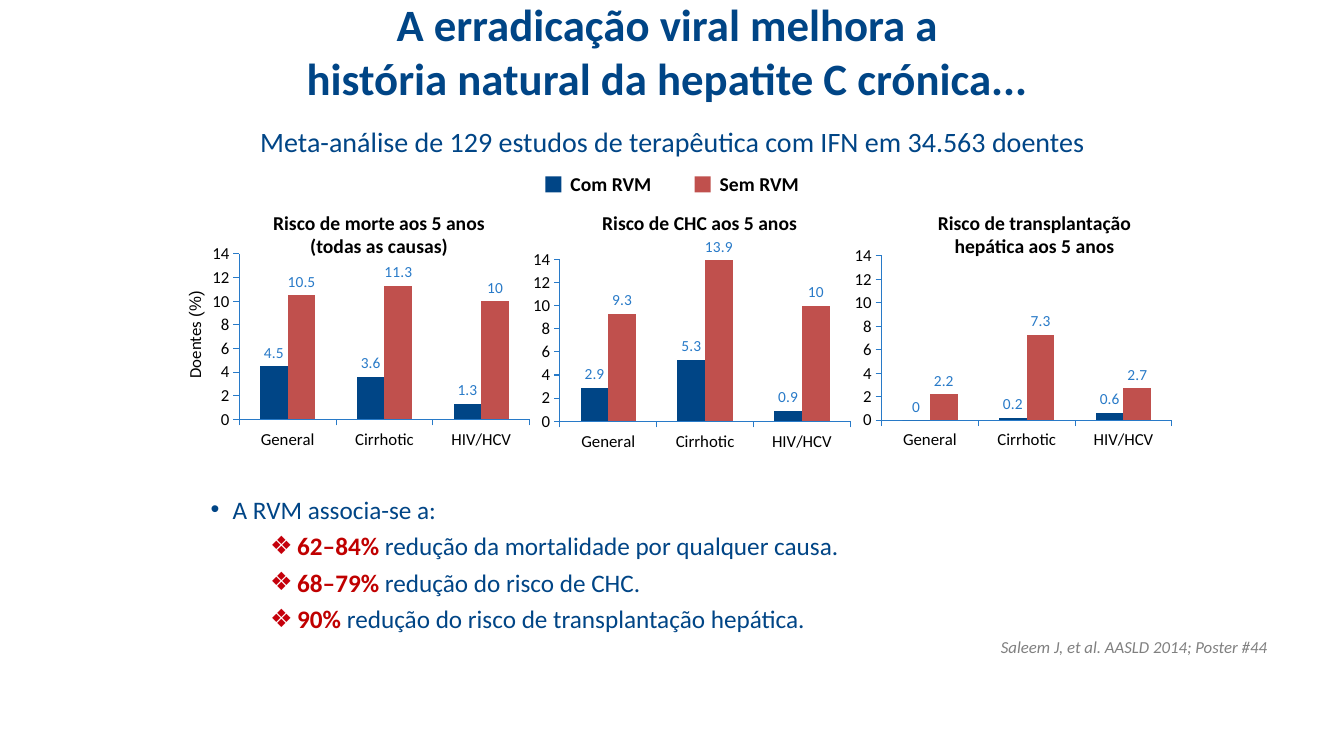
"""Slide on viral eradication and the natural history of chronic hepatitis C."""
from lxml import etree
from pptx import Presentation, util as u
from pptx.chart.data import CategoryChartData
from pptx.dml.color import RGBColor
from pptx.enum import chart as ch, shapes, text
from pptx.oxml.ns import qn

NAVY, RED, BLUE, BLACK = "004586", "C0504D", "287AC8", "000000"
CENTER, RIGHT = text.PP_ALIGN.CENTER, text.PP_ALIGN.RIGHT


def paint(target, color):
    if hasattr(target, "solid"):
        target.solid()
        target = target.fore_color
    target.rgb = RGBColor.from_string(color)


def write(box, paragraphs, size=14, color=BLACK, bold=False, italic=False, align=None,
          anchor=text.MSO_ANCHOR.TOP, rotation=0, bullets=(), space=0):
    """Each paragraph is a list of (text, overrides) runs; bullets hold (mark, margin, hanging, color)."""
    area = slide.shapes.add_textbox(*map(u.Inches, box))
    area.rotation = rotation
    frame = area.text_frame
    frame.word_wrap, frame.vertical_anchor = True, anchor
    for i, runs in enumerate(paragraphs):
        para = frame.paragraphs[0] if i == 0 else frame.add_paragraph()
        if bullets:
            mark, margin, hanging, mark_color = bullets[i]
            props = para._p.get_or_add_pPr()
            props.set("marL", str(u.Inches(margin)))
            props.set("indent", str(-u.Inches(hanging)))
            tint = etree.SubElement(props, qn("a:buClr"))
            etree.SubElement(tint, qn("a:srgbClr"), val=mark_color)
            etree.SubElement(props, qn("a:buFont"), typeface="Arial")
            etree.SubElement(props, qn("a:buChar"), char=mark)
        if align is not None:
            para.alignment = align
        if i:
            para.space_before = u.Pt(space)
        for words, changes in runs:
            for n, line in enumerate(words.split("\n")):
                if n:
                    para.add_line_break()
                run = para.add_run()
                run.text = line
                run.font.size = u.Pt(size)
                run.font.name = changes.get("font", "Calibri")
                run.font.bold = changes.get("bold", bold)
                run.font.italic = italic
                paint(run.font.color, changes.get("color", color))


deck = Presentation()
deck.slide_width, deck.slide_height = u.Inches(13.33), u.Inches(7.5)
slide = deck.slides.add_slide(deck.slide_layouts[6])

write((0.62, 0.17, 12, 0.66),
      [[("A erradicação viral melhora a\nhistória natural da hepatite C crónica...", {})]],
      size=32, color=NAVY, bold=True, align=CENTER, anchor=text.MSO_ANCHOR.MIDDLE)

strong = {"color": "C00000", "bold": True}
outcomes = [("62–84% ", "redução da mortalidade por qualquer causa."),
            ("68–79% ", "redução do risco de CHC."),
            ("90% ", "redução do risco de transplantação hepática.")]
write((1.55, 4.85, 9.46, 1.6),
      [[("A RVM associa-se a:", {})]] + [[(share, strong), (effect, {})] for share, effect in outcomes],
      size=18, color=NAVY, space=4.5,
      bullets=[("•", 0.66, 0.22, NAVY)] + [("❖", 1.3, 0.27, "C5000B")] * len(outcomes))

write((0, 6.27, 12.67, 0.32), [[("Saleem J, et al. AASLD 2014; Poster #44", {})]],
      size=12, color="808080", italic=True, align=RIGHT)

risks = [
    ("Risco de morte aos 5 anos (todas as causas)", 2.39, (1.94, 2.35, 3.47, 2.57),
     (0.066, 0.639), (4.5, 3.6, 1.3), (10.5, 11.3, 10)),
    ("Risco de CHC aos 5 anos", 5.57, (5.12, 2.2, 3.47, 2.74),
     (0.136, 0.587), (2.9, 5.3, 0.9), (9.3, 13.9, 10)),
    ("Risco de transplantação hepática aos 5 anos", 8.89, (8.31, 2.37, 3.47, 2.57),
     (0.066, 0.634), (0, 0.2, 0.6), (2.2, 7.3, 2.7)),
]
for heading, heading_left, box, (plot_top, plot_height), with_svr, without_svr in risks:
    data = CategoryChartData()
    data.categories = ["General", "Cirrhotic", "HIV/HCV"]
    data.add_series("Com RVM", with_svr)
    data.add_series("Sem RVM", without_svr)
    chart = slide.shapes.add_chart(ch.XL_CHART_TYPE.COLUMN_CLUSTERED,
                                   *map(u.Inches, box), data).chart
    chart.has_legend = chart.has_title = False
    chart.font.size, chart.font.name = u.Pt(18), "Calibri"
    paint(chart.font.color, BLUE)

    for axis in (chart.category_axis, chart.value_axis):
        axis.has_major_gridlines = False
        axis.major_tick_mark = ch.XL_TICK_MARK.OUTSIDE
        axis.minor_tick_mark = ch.XL_TICK_MARK.NONE
        axis.format.line.width = u.Pt(0.75)
        paint(axis.format.line.color, BLUE)
        axis.tick_labels.font.size = u.Pt(12)
        axis.tick_labels.font.name = "Calibri"
        paint(axis.tick_labels.font.color, BLACK)
    scale = chart.value_axis
    scale.minimum_scale, scale.maximum_scale, scale.major_unit = 0, 14, 2

    columns = chart.plots[0]
    columns.gap_width, columns.overlap, columns.vary_by_categories = 150, 0, False
    for series, color in zip(columns.series, (NAVY, RED)):
        paint(series.format.fill, color)
        labels = series.data_labels
        labels.show_value = True
        labels.position = ch.XL_LABEL_POSITION.OUTSIDE_END
        labels.font.size, labels.font.name = u.Pt(11), "Calibri"
        paint(labels.font.color, BLUE)

    plot_area = chart._chartSpace.find(".//" + qn("c:plotArea"))
    for old in plot_area.findall(qn("c:layout")):
        plot_area.remove(old)
    layout = etree.Element(qn("c:layout"))
    manual = etree.SubElement(layout, qn("c:manualLayout"))
    for tag, value in (("layoutTarget", "inner"), ("xMode", "edge"), ("yMode", "edge"),
                       ("x", 0.125), ("y", plot_top), ("w", 0.83), ("h", plot_height)):
        etree.SubElement(manual, qn("c:" + tag), val=str(value))
    plot_area.insert(0, layout)

    write((heading_left, 2.04, 2.74, 0.57), [[(heading, {})]], bold=True, align=CENTER)

write((0.74, 3.17, 2.38, 0.3), [[("Doentes", {}), (" (%)", {"font": "Arial"})]],
      size=12, align=CENTER, rotation=270)

for group, left, color in (("Com RVM", 5.41, NAVY), ("Sem RVM", 6.89, RED)):
    key = slide.shapes.add_shape(shapes.MSO_SHAPE.RECTANGLE, u.Inches(left), u.Inches(1.75),
                                 u.Inches(0.16), u.Inches(0.16))
    key.shadow.inherit = False
    paint(key.fill, color)
    key.line.fill.background()
    write((left + 0.15, 1.66, 1.2, 0.34), [[(group, {})]], bold=True)

write((2.34, 1.19, 8.66, 0.44),
      [[("Meta-análise de 129 estudos de terapêutica com IFN em 34.563 doentes", {})]],
      size=20, color=NAVY, align=CENTER)

deck.save("out.pptx")
